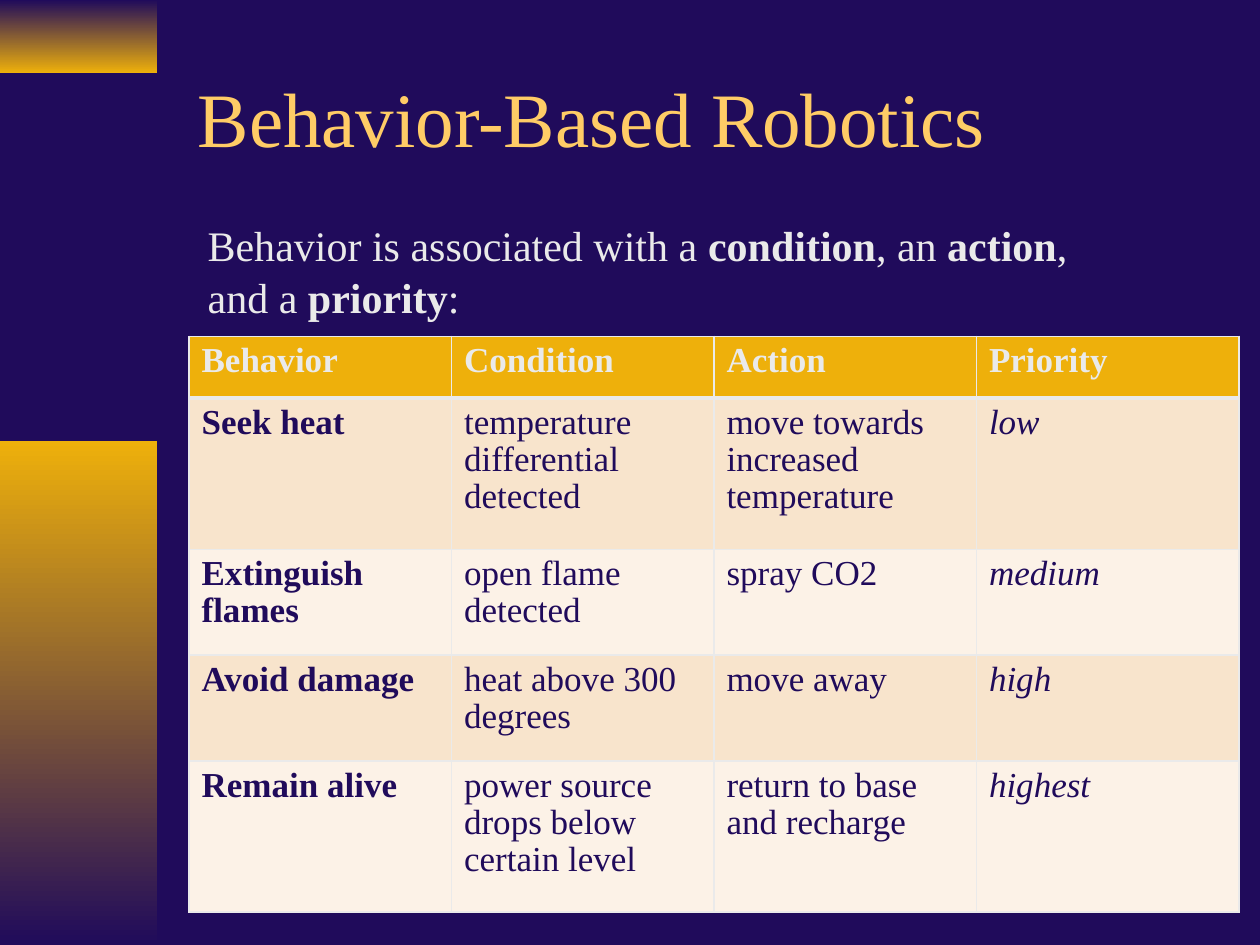
import pptx
import pptx.util
import pptx.dml.color
import pptx.enum.shapes
import pptx.enum.text
import pptx.oxml.ns
import lxml.etree as etree

NAVY, GOLD, PALE = "200B5B", "EEB00B", "EAEAEA"
FACE = "Times New Roman"
inch = pptx.util.Inches


def tint(code):
    return pptx.dml.color.RGBColor.from_string(code)


def style(run, size, code, bold=False, slant=False):
    font = run.font
    font.name, font.size = FACE, pptx.util.Pt(size)
    font.bold, font.italic = bold, slant
    font.color.rgb = tint(code)


deck = pptx.Presentation()
wide, high = inch(10), inch(7.5)
deck.slide_width, deck.slide_height = wide, high
slide = deck.slides.add_slide(deck.slide_layouts[5])
slide.background.fill.solid()
slide.background.fill.fore_color.rgb = tint(NAVY)

# Gradient bars down the left edge
for top, tall, ends in [(0, inch(0.58), (NAVY, GOLD)),
                        (inch(3.5), inch(4), (GOLD, NAVY))]:
    bar = slide.shapes.add_shape(
        pptx.enum.shapes.MSO_SHAPE.RECTANGLE, 0, top, wide // 8, tall)
    bar.shadow.inherit = False
    bar.line.fill.background()
    bar.fill.gradient()
    bar.fill.gradient_angle = 270
    for stop, code, place in zip(bar.fill.gradient_stops, ends, (0, 1)):
        stop.color.rgb = tint(code)
        stop.position = place

# Title
title = slide.shapes.title
title.left, title.top = inch(1.47), inch(0.25)
title.width, title.height = inch(8.5), inch(1.25)
frame = title.text_frame
frame.text = "Behavior-Based Robotics"
frame.vertical_anchor = pptx.enum.text.MSO_ANCHOR.MIDDLE
frame.auto_size = pptx.enum.text.MSO_AUTO_SIZE.NONE
frame.margin_top = inch(0.16)
frame.paragraphs[0].alignment = pptx.enum.text.PP_ALIGN.LEFT
style(frame.paragraphs[0].runs[0], 44, "FFCC66")

# Lead sentence, key words in bold
lead = slide.shapes.add_textbox(inch(1.17), inch(1.67), inch(9.33), inch(5.67))
lead.text_frame.word_wrap = True
para = lead.text_frame.paragraphs[0]
para.text = "Behavior is associated with a |condition|, an |action|, \vand a |priority|:"
para.line_spacing = 1.05
para._p.get_or_add_pPr().set("marL", str(inch(0.38)))
bold = False
for run in list(para.runs):
    parts = run.text.split("|")
    run.text = parts[0]
    style(run, 24, PALE, bold)
    last = run._r
    for part in parts[1:]:
        bold = not bold
        more = para.add_run()
        more.text = part
        style(more, 24, PALE, bold)
        last.addnext(more._r)
        last = more._r

# Behavior table
rows = [
    ("Behavior", "Condition", "Action", "Priority"),
    ("Seek heat", "temperature differential detected",
     "move towards increased temperature", "low"),
    ("Extinguish flames", "open flame detected", "spray CO2", "medium"),
    ("Avoid damage", "heat above 300 degrees", "move away", "high"),
    ("Remain alive", "power source drops below certain level",
     "return to base and recharge", "highest"),
]
talls = [0.49, 1.2, 0.84, 0.84, 1.2]
grid = slide.shapes.add_table(
    len(rows), 4, inch(1.5), inch(2.67), wide * 5 // 6, inch(sum(talls))).table
for r, (words, tall) in enumerate(zip(rows, talls)):
    grid.rows[r].height = inch(tall)
    for c, word in enumerate(words):
        cell = grid.cell(r, c)
        cell.text = word
        para = cell.text_frame.paragraphs[0]
        para.line_spacing = 0.96
        style(para.runs[0], 20, NAVY if r else PALE,
              r == 0 or c == 0, r > 0 and c == 3)
        # Borders come before the fill in the cell's XML
        props = cell._tc.get_or_add_tcPr()
        for side in ("lnL", "lnR", "lnT", "lnB"):
            thick = (r == 0 and side == "lnB") or (r == 1 and side == "lnT")
            edge = etree.SubElement(props, pptx.oxml.ns.qn("a:" + side),
                                    w=str(pptx.util.Pt(3 if thick else 1)))
            solid = etree.SubElement(edge, pptx.oxml.ns.qn("a:solidFill"))
            etree.SubElement(solid, pptx.oxml.ns.qn("a:srgbClr"), val=PALE)
        cell.fill.solid()
        cell.fill.fore_color.rgb = tint(
            GOLD if r == 0 else "F8E4CC" if r % 2 else "FCF2E7")

deck.save("out.pptx")
